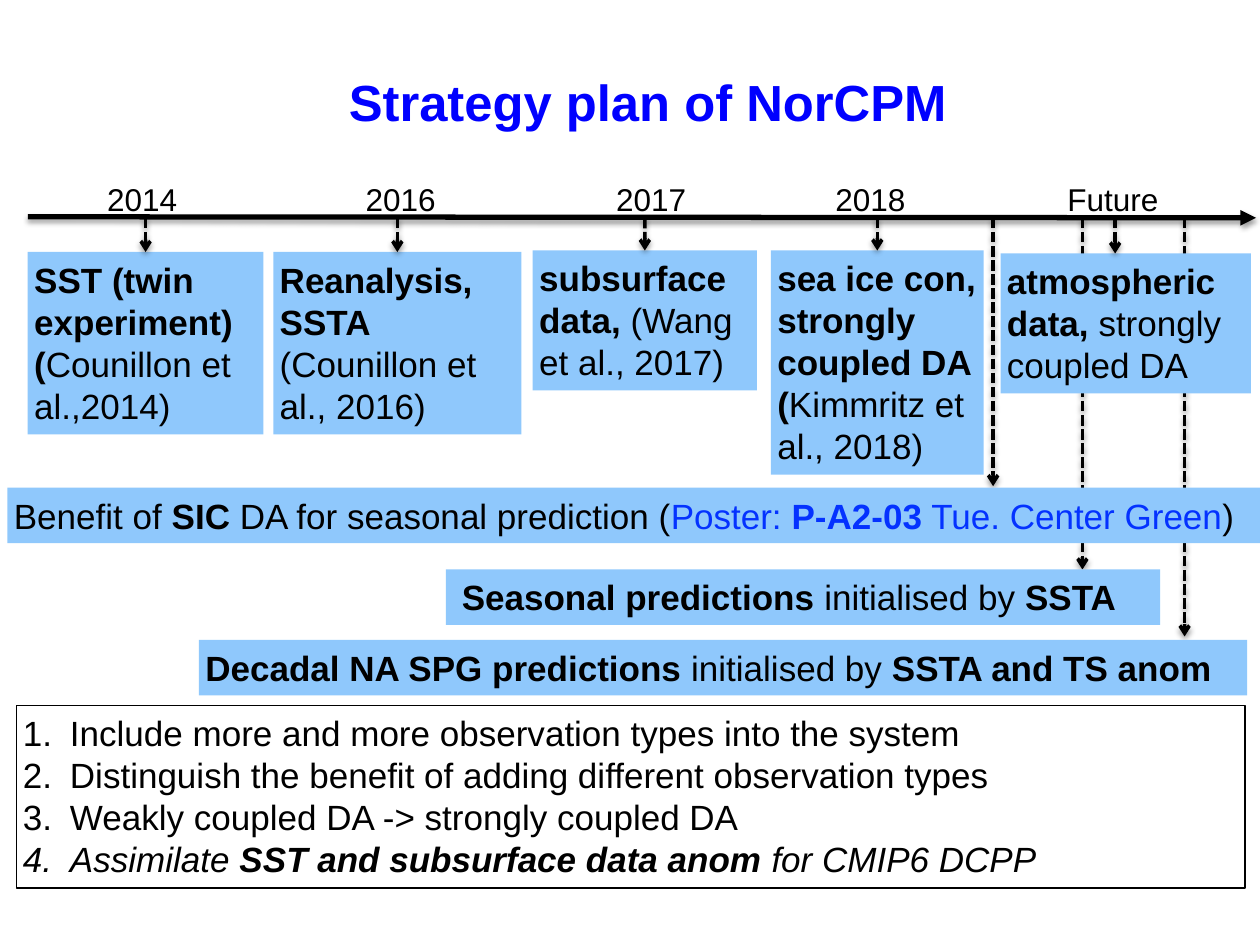
"""Build the NorCPM strategy timeline slide."""
from lxml.etree import SubElement
from pptx import Presentation
from pptx.dml.color import RGBColor
from pptx.enum.dml import MSO_LINE_DASH_STYLE as Dash
from pptx.enum.shapes import MSO_CONNECTOR as Connector, MSO_SHAPE as Shape
from pptx.enum.text import MSO_ANCHOR as Anchor, MSO_AUTO_SIZE as AutoSize, PP_ALIGN as Align
from pptx.oxml.ns import qn
from pptx.util import Cm, Pt

BLACK = RGBColor(0x00, 0x00, 0x00)
TITLE_BLUE = RGBColor(0x00, 0x00, 0xFF)
POSTER_BLUE = RGBColor(0x04, 0x32, 0xFF)
BOX_BLUE = RGBColor(0x8F, 0xC8, 0xFC)
FONT = "Arial"
INSET = Cm(0.13)
LIST_INDENT = Cm(0.95)
AXIS_Y = 4.39
JOIN_TOLERANCE = 0.12


def write(shape, paragraphs, size=20, wrap=True):
    """Fill a shape with paragraphs of (text, style, colour) runs."""
    frame = shape.text_frame
    frame.auto_size = AutoSize.NONE
    frame.word_wrap = wrap
    frame.vertical_anchor = Anchor.TOP
    frame.margin_left = frame.margin_right = INSET
    frame.margin_top = frame.margin_bottom = INSET
    for index, runs in enumerate(paragraphs):
        paragraph = frame.paragraphs[0] if index == 0 else frame.add_paragraph()
        paragraph.alignment = Align.LEFT
        paragraph.space_before = Pt(0)
        for text, style, *colour in runs:
            run = paragraph.add_run()
            run.text = text
            run.font.name = FONT
            run.font.size = Pt(size)
            run.font.bold = "b" in style
            run.font.italic = "i" in style
            run.font.color.rgb = colour[0] if colour else BLACK


def add_arrow(start, end, width=2, head="arrow", dashed=True):
    """Draw a black arrow with a soft shadow."""
    arrow = slide.shapes.add_connector(Connector.STRAIGHT, *map(Cm, start + end))
    arrow.line.color.rgb = BLACK
    arrow.line.width = Pt(width)
    if dashed:
        arrow.line.dash_style = Dash.SQUARE_DOT
    SubElement(arrow.line._get_or_add_ln(), qn("a:tailEnd"), type=head)
    effects = SubElement(arrow._element.spPr, qn("a:effectLst"))
    shadow = SubElement(effects, qn("a:outerShdw"), blurRad="40000", dist="20000",
                        dir="5400000", rotWithShape="0")
    colour = SubElement(shadow, qn("a:srgbClr"), val=str(BLACK))
    SubElement(colour, qn("a:alpha"), val="38000")
    return arrow


presentation = Presentation()
presentation.slide_width = Cm(25.4)
presentation.slide_height = Cm(19.05)
slide = presentation.slides.add_slide(presentation.slide_layouts[1])

title, body = slide.placeholders
title.left, title.top, title.width, title.height = map(Cm, (1.42, 1.3, 23.29, 1.47))
write(title, [[("Strategy plan of NorCPM", "b", TITLE_BLUE)]], size=29, wrap=False)
title.text_frame.paragraphs[0].alignment = Align.CENTER

goals = [
    [("Include more and more observation types into the system", "")],
    [("Distinguish the benefit of adding different observation types", "")],
    [("Weakly coupled DA -> strongly coupled DA", "")],
    [("Assimilate ", "i"), ("SST and subsurface data anom ", "bi"), ("for CMIP6 DCPP", "i")],
]
body.left, body.top, body.width, body.height = map(Cm, (0.33, 14.22, 24.77, 3.68))
body.line.color.rgb = BLACK
body.line.width = Pt(1)
write(body, goals)
for paragraph in body.text_frame.paragraphs:
    properties = paragraph._p.get_or_add_pPr()
    properties.set("marL", str(LIST_INDENT))
    properties.set("indent", str(-LIST_INDENT))
    SubElement(properties, qn("a:buFont"), typeface="+mj-lt")
    SubElement(properties, qn("a:buAutoNum"), type="arabicPeriod")

for x, bottom in ((23.88, 12.83), (21.82, 11.48), (20.02, 9.8)):
    add_arrow((x, AXIS_Y), (x, bottom))
add_arrow((0.56, 4.37), (25.32, AXIS_Y), width=3, head="triangle", dashed=False)

milestones = [
    ("2014", 2.03, 2.87, (0.56, 5.08, 4.75, 3.68),
     [[("SST (twin experiment) (", "b"), ("Counillon et al.,2014)", "")]]),
    ("2016", 7.24, 7.95, (5.51, 5.08, 5.0, 3.68),
     [[("Reanalysis, SSTA", "b")], [("(Counillon et al., 2016)", "")]]),
    ("2017", 12.29, 13.06, (10.74, 5.05, 4.52, 2.82),
     [[("subsurface data, ", "b"), ("(Wang et al., 2017)", "")]]),
    ("2018", 16.71, 17.58, (15.54, 5.05, 4.29, 4.52),
     [[("sea ice con,", "b")], [("strongly coupled DA", "b")],
      [("(", "b"), ("Kimmritz et al., 2018)", "")]]),
    ("Future", 21.39, 22.48, (20.17, 5.11, 5.05, 2.82),
     [[("atmospheric data, ", "b"), ("strongly coupled DA", "")]]),
]
predictions = [
    ((0.15, 9.83, 25.3, 1.12),
     [[("Benefit of ", ""), ("SIC", "b"), (" DA for seasonal prediction (", ""),
       ("Poster: ", "", POSTER_BLUE), ("P-A2-03", "b", POSTER_BLUE),
       (" Tue. Center Green", "", POSTER_BLUE), (")", "")]]),
    ((8.99, 11.48, 14.4, 1.12),
     [[("Seasonal predictions ", "b"), ("initialised by ", ""), ("SSTA", "b")]]),
    ((4.01, 12.9, 21.13, 1.12),
     [[("Decadal NA SPG predictions ", "b"), ("initialised by", ""),
       (" SSTA and TS anom", "b")]]),
]

boxes = []
for bounds, paragraphs in [milestone[3:] for milestone in milestones] + predictions:
    box = slide.shapes.add_shape(Shape.RECTANGLE, *map(Cm, bounds))
    box.shadow.inherit = False
    box.fill.solid()
    box.fill.fore_color.rgb = BOX_BLUE
    box.line.fill.background()
    write(box, paragraphs)
    boxes.append(box)
seasonal_box = boxes[-2]
seasonal_box.text_frame.margin_left = Cm(0.32)

for (year, label_left, arrow_x, bounds, _), box in zip(milestones, boxes):
    left, top, width, _ = bounds
    middle = left + width / 2
    joined = abs(arrow_x - middle) < JOIN_TOLERANCE
    x = middle if joined else arrow_x
    arrow = add_arrow((x, AXIS_Y), (x, top))
    if joined:
        arrow.end_connect(box, 0)
    label_width = 2.39 if year == "Future" else 1.68
    label = slide.shapes.add_textbox(Cm(label_left), Cm(3.5), Cm(label_width), Cm(1.03))
    write(label, [[(year, "")]], size=18, wrap=False)

presentation.save("out.pptx")
